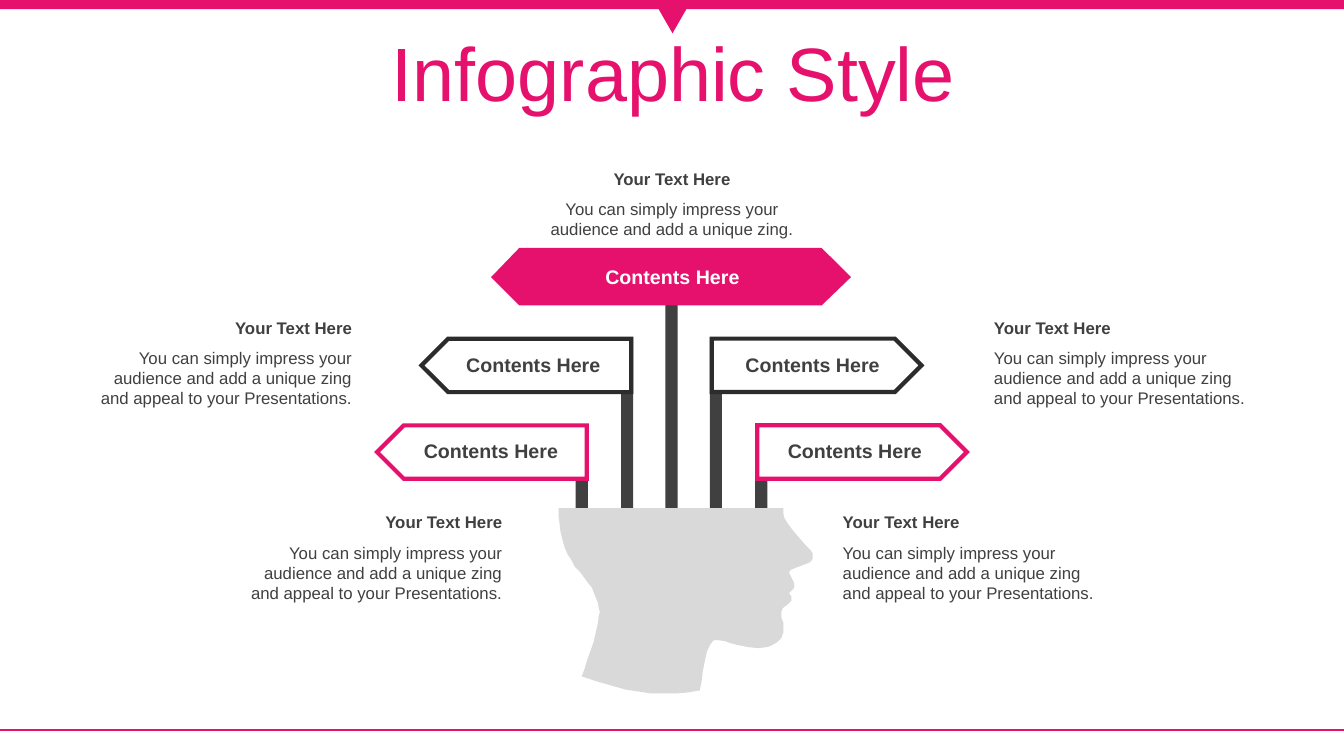
"""Build the signpost-head infographic slide."""
from dataclasses import dataclass
from typing import NamedTuple

from lxml.etree import SubElement
from pptx import Presentation
from pptx.dml.color import RGBColor
from pptx.enum.shapes import MSO_CONNECTOR as Connector, MSO_SHAPE as Preset
from pptx.enum.text import MSO_ANCHOR as Anchor, MSO_AUTO_SIZE as AutoSize, PP_ALIGN as Align
from pptx.oxml.ns import qn
from pptx.shapes.autoshape import Shape
from pptx.shapes.shapetree import SlideShapes
from pptx.util import Emu, Pt

EMU_PER_PX = 9144


@dataclass(frozen=True)
class Theme:
    font: str = "Arial"
    pink: str = "E6106D"
    charcoal: str = "404040"
    black: str = "2C2C2C"
    silver: str = "D9D9D9"
    white: str = "FFFFFF"
    title_size: int = 54
    label_size: int = 14
    body_size: int = 12
    outline: float = 3
    rule: float = 1.5


class Box(NamedTuple):
    left: int
    top: int
    width: int
    height: int


class Stem(NamedTuple):
    left: int
    top: int


class Sign(NamedTuple):
    left: int
    top: int
    color: str
    points_left: bool
    label_left: int


class Note(NamedTuple):
    left: int
    top: int
    align: Align
    body: str
    body_height: int


THEME = Theme()
STEM_WIDTH, STEM_BOTTOM = 12, 524
SIGN_WIDTH, SIGN_HEIGHT = 208, 53
LABEL_WIDTH, LABEL_HEIGHT = 174, 34
NOTE_WIDTH, HEADING_HEIGHT = 279, 30
HEADING, LABEL = "Your Text Here", "Contents Here"
SHORT_BODY = "You can simply impress your audience and add a unique zing."
LONG_BODY = "You can simply impress your audience and add a unique zing and appeal to your Presentations."

STEMS = [Stem(660, 299), Stem(616, 335), Stem(704, 335), Stem(571, 422), Stem(749, 422)]
SIGNS = [
    Sign(751, 422, THEME.pink, False, 761),
    Sign(706, 336, THEME.black, False, 719),
    Sign(374, 422, THEME.pink, True, 400),
    Sign(418, 336, THEME.black, True, 442),
]
NOTES = [
    Note(826, 503, Align.LEFT, LONG_BODY, 71),
    Note(229, 503, Align.RIGHT, LONG_BODY, 71),
    Note(976, 310, Align.LEFT, LONG_BODY, 71),
    Note(80, 310, Align.RIGHT, LONG_BODY, 71),
    Note(527, 162, Align.CENTER, SHORT_BODY, 50),
]
BANNER = [(516, 248), (814, 248), (841, 275), (814, 301), (516, 301), (490, 275)]
HEAD = [
    (554, 504), (777, 504), (777, 510), (778, 514), (781, 519), (787, 527), (793, 534),
    (800, 542), (804, 546), (806, 549), (806, 554), (805, 556), (803, 558), (798, 560),
    (790, 563), (785, 565), (783, 567), (783, 569), (785, 573), (787, 577), (788, 581),
    (787, 584), (785, 586), (783, 588), (783, 589), (785, 592), (785, 596), (784, 597),
    (781, 600), (778, 602), (776, 604), (775, 607), (775, 613), (777, 618), (777, 627),
    (775, 633), (771, 637), (766, 640), (761, 642), (752, 643), (742, 642), (732, 640),
    (724, 638), (719, 636), (711, 635), (709, 635), (707, 636), (704, 640), (701, 647),
    (699, 656), (697, 666), (696, 675), (694, 685), (682, 687), (670, 688), (646, 688),
    (633, 686), (620, 684), (606, 680), (592, 676), (577, 671), (580, 663), (583, 653),
    (586, 645), (589, 636), (591, 627), (593, 618), (594, 610), (595, 607), (594, 604),
    (593, 598), (591, 593), (587, 583), (583, 578), (575, 567), (570, 562), (567, 556),
    (563, 550), (560, 543), (558, 536), (556, 528), (555, 520), (554, 512),
]


def px(length: int) -> Emu:
    """Turn pixels into EMU."""
    return Emu(length * EMU_PER_PX)


def paint(shape: Shape, fill: str, line: str | None = None) -> None:
    """Fill a shape and give it a mitred outline or none."""
    shape.shadow.inherit = False
    shape.fill.solid()
    shape.fill.fore_color.rgb = RGBColor.from_string(fill)
    if line is None:
        shape.line.fill.background()
        return
    shape.line.color.rgb = RGBColor.from_string(line)
    shape.line.width = Pt(THEME.outline)
    outline = shape._element.spPr.find(qn("a:ln"))
    SubElement(outline, qn("a:miter"), lim="800000")


def add_preset(page: SlideShapes, preset: Preset, box: Box, fill: str,
               line: str | None = None, rotation: int = 0) -> None:
    """Draw one preset shape."""
    shape = page.add_shape(preset, *map(px, box))
    shape.rotation = rotation
    paint(shape, fill, line)


def add_outline(page: SlideShapes, points: list[tuple[int, int]], fill: str,
                line: str | None = None) -> None:
    """Draw a closed polygon."""
    builder = page.build_freeform(*points[0], scale=EMU_PER_PX)
    builder.add_line_segments(points[1:], close=True)
    paint(builder.convert_to_shape(), fill, line)


def add_text(page: SlideShapes, box: Box, text: str, size: int, color: str,
             align: Align = Align.CENTER, bold: bool = False) -> Shape:
    """Add a wrapped one-paragraph text box."""
    shape = page.add_textbox(*map(px, box))
    shape.text_frame.word_wrap = True
    shape.text_frame.auto_size = AutoSize.SHAPE_TO_FIT_TEXT
    para = shape.text_frame.paragraphs[0]
    para.text = text
    para.alignment = align
    para.font.name = THEME.font
    para.font.size = Pt(size)
    para.font.bold = bold
    para.font.color.rgb = RGBColor.from_string(color)
    return shape


def add_frame(page: SlideShapes) -> None:
    """Draw the slide's edges and title."""
    rule = page.add_connector(Connector.STRAIGHT, px(1333), px(724), px(0), px(724))
    rule.line.color.rgb = RGBColor.from_string(THEME.pink)
    rule.line.width = Pt(THEME.rule)
    SubElement(rule._element.spPr, qn("a:effectLst"))
    add_preset(page, Preset.RECTANGLE, Box(0, 0, 1333, 9), THEME.pink)
    add_preset(page, Preset.ISOSCELES_TRIANGLE, Box(648, 0, 38, 33), THEME.pink, rotation=180)
    title = add_text(page, Box(35, 37, 1266, 79), "Infographic Style", THEME.title_size, THEME.pink)
    title.text_frame.auto_size = AutoSize.NONE
    title.text_frame.vertical_anchor = Anchor.MIDDLE
    para = title.text_frame.paragraphs[0]
    para.line_spacing = 0.9
    para.space_before = Pt(10)


def add_sign(page: SlideShapes, sign: Sign) -> None:
    """Draw a pointed sign with its label."""
    add_preset(page, Preset.PENTAGON, Box(sign.left, sign.top, SIGN_WIDTH, SIGN_HEIGHT),
               THEME.white, sign.color, 180 if sign.points_left else 0)
    add_text(page, Box(sign.label_left, sign.top + 9, LABEL_WIDTH, LABEL_HEIGHT), LABEL,
             THEME.label_size, THEME.charcoal, bold=True)


def add_note(page: SlideShapes, note: Note) -> None:
    """Add a bold heading with its body text."""
    add_text(page, Box(note.left, note.top, NOTE_WIDTH, HEADING_HEIGHT), HEADING,
             THEME.body_size, THEME.charcoal, note.align, bold=True)
    add_text(page, Box(note.left, note.top + HEADING_HEIGHT, NOTE_WIDTH, note.body_height),
             note.body, THEME.body_size, THEME.charcoal, note.align)


def main() -> None:
    """Build and save the deck."""
    deck = Presentation()
    deck.slide_width, deck.slide_height = px(1333), px(750)
    page = deck.slides.add_slide(deck.slide_layouts[6]).shapes
    add_frame(page)
    for stem in STEMS:
        box = Box(stem.left, stem.top, STEM_WIDTH, STEM_BOTTOM - stem.top)
        add_preset(page, Preset.RECTANGLE, box, THEME.charcoal)
    add_outline(page, HEAD, THEME.silver)
    for sign in SIGNS:
        add_sign(page, sign)
    for note in NOTES:
        add_note(page, note)
    add_outline(page, BANNER, THEME.pink, THEME.pink)
    add_text(page, Box(579, 258, 176, LABEL_HEIGHT), LABEL, THEME.label_size, THEME.white, bold=True)
    deck.save("out.pptx")


if __name__ == "__main__":
    main()
